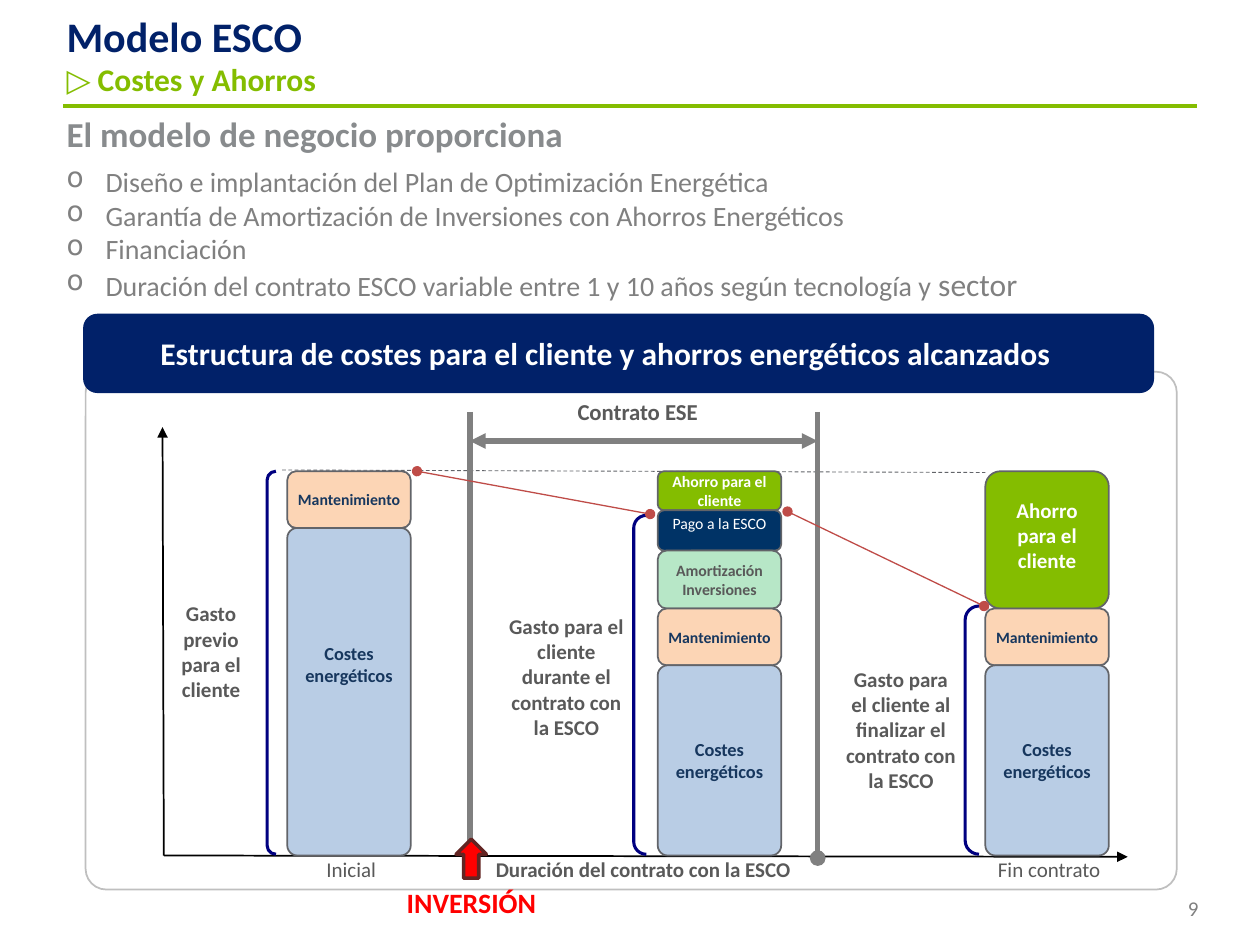
from dataclasses import dataclass

import pptx
import pptx.dml.color
import pptx.enum.dml
import pptx.enum.shapes
import pptx.enum.text
import pptx.oxml.ns
import pptx.util
from lxml import etree

Inches = pptx.util.Inches
Pt = pptx.util.Pt
Shapes = pptx.enum.shapes.MSO_SHAPE
Align = pptx.enum.text.PP_ALIGN
Anchor = pptx.enum.text.MSO_ANCHOR
qn = pptx.oxml.ns.qn


@dataclass(frozen=True)
class Theme:
    font: str = "Calibri"
    navy: str = "012169"
    green: str = "84BD00"
    heading: str = "888B8D"
    gray: str = "808080"
    text: str = "595959"
    white: str = "FFFFFF"
    black: str = "000000"
    frame: str = "BFBFBF"
    outline: str = "626469"
    energy: str = "B9CDE5"
    upkeep: str = "FCD5B5"
    payback: str = "B7E7C7"
    fee: str = "003366"
    bar_text: str = "17375E"
    bracket: str = "000080"
    link: str = "BF4C48"
    red: str = "FF0000"
    dark_red: str = "632523"
    title: float = 24
    lead: float = 20
    subtitle: float = 18
    body: float = 16
    contract: float = 13
    label: float = 12
    cost: float = 10.5
    small: float = 9


@dataclass(frozen=True)
class Segment:
    """One block of a cost bar; lift raises its label above the middle."""
    label: str
    height: float
    fill: str
    color: str
    size: float
    bold: bool = True
    lift: float = 0
    radius: float = 0.07


class Painter:
    def __init__(self, page, theme):
        self.page = page
        self.theme = theme

    def rgb(self, value):
        return pptx.dml.color.RGBColor.from_string(value)

    def style(self, para, size, color, bold=False, align=Align.LEFT):
        para.alignment = align
        font = para.font
        font.name, font.size, font.bold = self.theme.font, Pt(size), bold
        font.color.rgb = self.rgb(color)

    def text(self, left, top, width, height, lines, size, color, bold=False,
             align=Align.LEFT, inset=0.06, wrap=True):
        box = self.page.shapes.add_textbox(*map(Inches, (left, top, width, height)))
        frame = box.text_frame
        frame.word_wrap = wrap
        frame.margin_left = frame.margin_right = Inches(inset)
        frame.text = lines
        for para in frame.paragraphs:
            self.style(para, size, color, bold, align)
        return frame

    def shape(self, kind, left, top, width, height, fill=None, line=None,
              weight=1, adjust=None):
        item = self.page.shapes.add_shape(kind, *map(Inches, (left, top, width, height)))
        item.shadow.inherit = False
        if fill:
            item.fill.solid()
            item.fill.fore_color.rgb = self.rgb(fill)
        else:
            item.fill.background()
        if line:
            item.line.color.rgb = self.rgb(line)
            item.line.width = Pt(weight)
        else:
            item.line.fill.background()
        if adjust is not None:
            item.adjustments[0] = adjust
        return item

    def line(self, start, end, color, weight, head=None, tail=None, dashed=False):
        item = self.page.shapes.add_connector(
            pptx.enum.shapes.MSO_CONNECTOR.STRAIGHT, *map(Inches, start + end))
        item.line.color.rgb = self.rgb(color)
        item.line.width = Pt(weight)
        if dashed:
            item.line.dash_style = pptx.enum.dml.MSO_LINE.DASH
        outline = item.line._get_or_add_ln()
        for tag, kind in (("a:headEnd", head), ("a:tailEnd", tail)):
            if kind:
                etree.SubElement(outline, qn(tag), type=kind)
        etree.SubElement(item._element.spPr, qn("a:effectLst"))

    def bar(self, left, top, width, segments):
        """Stack the segments downwards from top."""
        for part in segments:
            block = self.shape(Shapes.ROUNDED_RECTANGLE, left, top, width, part.height,
                               part.fill, self.theme.outline,
                               adjust=part.radius / min(width, part.height))
            frame = block.text_frame
            frame.word_wrap = True
            frame.vertical_anchor = Anchor.MIDDLE
            frame.margin_left = frame.margin_right = Inches(0.05)
            frame.margin_top = 0
            frame.margin_bottom = Inches(2 * part.lift)
            frame.text = part.label
            for para in frame.paragraphs:
                self.style(para, part.size, part.color, part.bold, Align.CENTER)
            top += part.height

    def bullet(self, para, indent):
        props = para._p.get_or_add_pPr()
        props.set("marL", str(Inches(indent)))
        props.set("indent", str(-Inches(indent)))
        etree.SubElement(props, qn("a:buChar"), char="o")


def draw_header(painter):
    theme = painter.theme
    painter.line((0.5, 0.84), (9.5, 0.84), theme.green, 2.5)
    title = painter.text(0.43, 0, 8.26, 0.86, "Modelo ESCO\n▷ Costes y Ahorros",
                         theme.title, theme.navy, True, inset=0.1)
    title.vertical_anchor = Anchor.MIDDLE
    painter.style(title.paragraphs[1], theme.subtitle, theme.green, True)
    painter.text(9.33, 7.06, 0.67, 0.4, "9", theme.label, theme.gray, inset=0.1)

    body = painter.text(0.43, 0.84, 9.37, 1.67, "El modelo de negocio proporciona",
                        theme.lead, theme.heading, True, inset=0.1)
    body.paragraphs[0].space_after = Pt(6)
    for item in (
        "Diseño e implantación del Plan de Optimización Energética",
        "Garantía de Amortización de Inversiones con Ahorros Energéticos",
        "Financiación",
        "Duración del contrato ESCO variable entre 1 y 10 años según tecnología y ",
    ):
        para = body.add_paragraph()
        para.add_run().text = item
        painter.bullet(para, 0.31)
        painter.style(para, theme.body, theme.gray)
    span = para.add_run()
    span.text = "sector"
    span.font.size = Pt(theme.subtitle)


def draw_panel(painter):
    theme = painter.theme
    painter.shape(Shapes.ROUNDED_RECTANGLE, 0.68, 2.95, 8.66, 4.11,
                  line=theme.frame, adjust=0.04)
    banner = painter.shape(Shapes.ROUNDED_RECTANGLE, 0.66, 2.49, 8.5, 0.63,
                           theme.navy, adjust=0.18)
    frame = banner.text_frame
    frame.margin_left = Inches(0.58)
    frame.vertical_anchor = Anchor.MIDDLE
    frame.text = "Estructura de costes para el cliente y ahorros energéticos alcanzados"
    painter.style(frame.paragraphs[0], theme.subtitle, theme.white, True)


def draw_costs(painter):
    theme = painter.theme
    top, base, bar_width = 3.74, 6.79, 0.98
    painter.line((2.24, 3.73), (7.82, 3.75), theme.outline, 0.5, dashed=True)
    for end in ((8.95, 6.8), (1.29, 3.39)):
        painter.line((1.3, base), end, theme.black, 1, tail="triangle")
    for x in (3.73, 6.49):
        painter.line((x, 3.27), (x, 6.81), theme.gray, 3, tail="oval")
    painter.line((3.73, 3.5), (6.49, 3.5), theme.gray, 3, "triangle", "triangle")

    def energy(height, lift=0):
        return Segment("Costes energéticos", height, theme.energy, theme.bar_text,
                       theme.cost, lift=lift, radius=0.08)

    upkeep = Segment("Mantenimiento", 0.45, theme.upkeep, theme.bar_text, theme.small)
    saving = "Ahorro para el cliente"
    bars = {
        2.28: [upkeep, energy(2.6, 0.22)],
        5.22: [
            Segment(saving, 0.31, theme.green, theme.white, theme.small, radius=0.05),
            Segment("Pago a la ESCO", 0.32, theme.fee, theme.white, theme.small,
                    bold=False, lift=0.06, radius=0.05),
            Segment("Amortización\nInversiones", 0.46, theme.payback, theme.text,
                    theme.small),
            upkeep, energy(1.51)],
        7.82: [
            Segment(saving, 1.09, theme.green, theme.white, theme.label,
                    lift=0.04, radius=0.12),
            upkeep, energy(1.51)],
    }
    for left, segments in bars.items():
        painter.bar(left, top, bar_width, segments)

    for left, bracket_top, width in ((2.12, 3.74, 0.07), (5.03, 4.09, 0.1), (7.66, 4.81, 0.11)):
        painter.shape(Shapes.LEFT_BRACKET, left, bracket_top, width, 6.78 - bracket_top,
                      line=theme.bracket, weight=1.75, adjust=1)
    for start, end in (((3.31, 3.74), (5.16, 4.08)), ((6.25, 4.06), (7.81, 4.81))):
        painter.line(start, end, theme.link, 0.75, "oval", "oval")


def draw_labels(painter):
    theme = painter.theme
    for left, top, width, height, label in (
        (1.27, 4.72, 0.81, 0.91, "Gasto previo para el cliente"),
        (3.97, 4.82, 1.05, 1.11, "Gasto para el cliente durante el contrato con la ESCO"),
        (6.64, 5.24, 1.02, 1.11, "Gasto para el cliente al finalizar el contrato con la ESCO"),
        (3.71, 6.75, 2.79, 0.3, "Duración del contrato con la ESCO"),
    ):
        painter.text(left, top, width, height, label, theme.label, theme.text,
                     True, Align.CENTER)
    painter.text(4.1, 3.11, 1.92, 0.32, "Contrato ESE", theme.contract, theme.text,
                 True, Align.CENTER)
    for left, width, label in ((2.53, 0.65, "Inicial"), (7.86, 1.08, "Fin contrato")):
        painter.text(left, 6.75, width, 0.3, label, theme.label, theme.text)
    painter.text(3.13, 6.98, 1.24, 0.37, "INVERSIÓN", theme.body, theme.red, True,
                 inset=0.1, wrap=False)
    painter.shape(Shapes.UP_ARROW, 3.62, 6.66, 0.24, 0.31, theme.red, theme.dark_red, 2)


def main():
    deck = pptx.Presentation()
    deck.slide_width, deck.slide_height = Inches(10), Inches(7.5)
    painter = Painter(deck.slides.add_slide(deck.slide_layouts[6]), Theme())
    for draw in (draw_header, draw_panel, draw_costs, draw_labels):
        draw(painter)
    deck.save("out.pptx")


if __name__ == "__main__":
    main()
